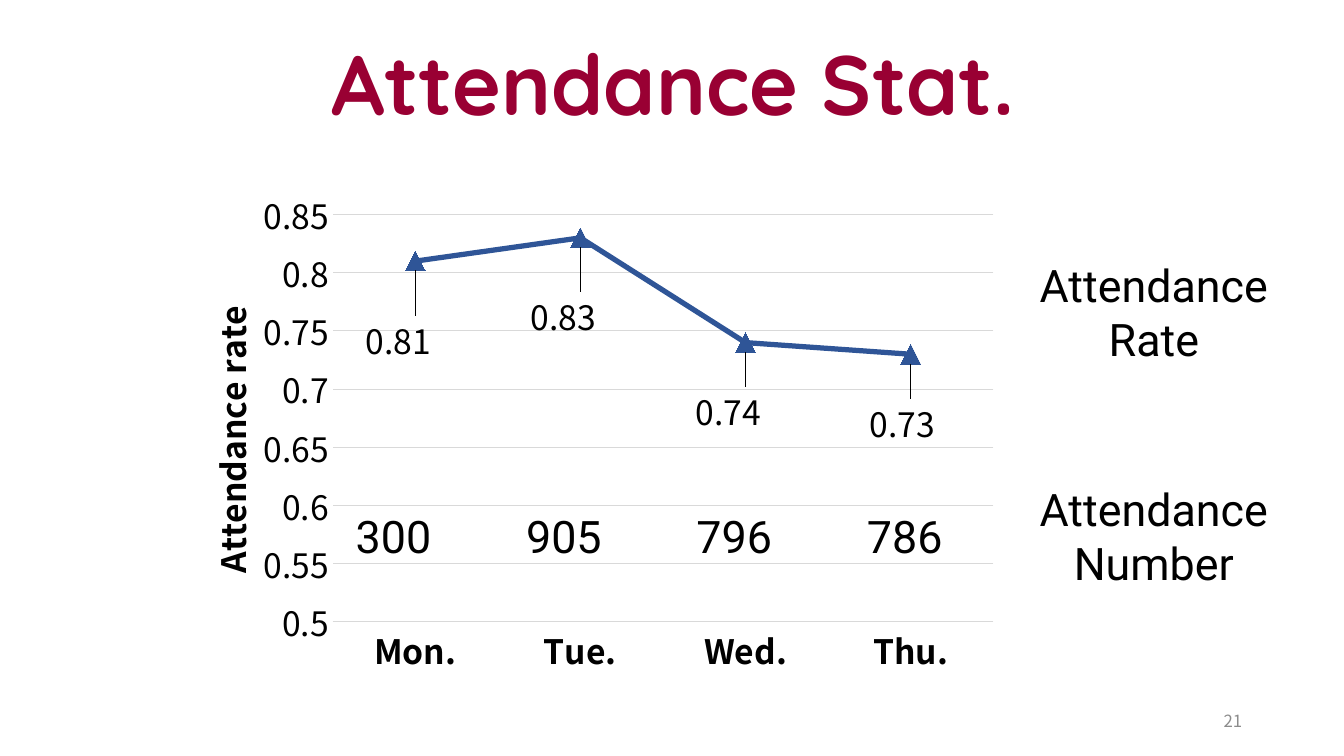
from pptx import Presentation
from pptx.chart.data import CategoryChartData
from pptx.dml.color import RGBColor
from pptx.enum.chart import XL_CHART_TYPE, XL_LABEL_POSITION, XL_MARKER_STYLE, XL_TICK_MARK
from pptx.enum.text import MSO_ANCHOR, PP_ALIGN
from pptx.oxml import parse_xml
from pptx.oxml.ns import nsdecls, qn
from pptx.util import Inches, Pt

RED = RGBColor(0x99, 0x00, 0x33)
BLUE = RGBColor(0x2F, 0x55, 0x97)
BLACK = RGBColor(0, 0, 0)
GRAY = RGBColor(0x8C, 0x8C, 0x8C)
PALE = RGBColor(0xD9, 0xD9, 0xD9)
SANS = "Noto Sans CJK SC"


def style(font, size, color=BLACK, name=SANS, bold=False):
    font.size = Pt(size)
    font.name = name
    font.bold = bold
    font.color.rgb = color


def add_text(text, left, top, width, height, align, size=32, color=BLACK, name="Roboto"):
    box = slide.shapes.add_textbox(Inches(left), Inches(top), Inches(width), Inches(height))
    frame = box.text_frame
    frame.word_wrap = True
    frame.text = text
    para = frame.paragraphs[0]
    para.alignment = align
    style(para.runs[0].font, size, color, name)
    return frame


def add_layout(parent, spot, x, y, extra=""):
    parent.insert(spot, parse_xml(
        f'<c:layout {nsdecls("c")}><c:manualLayout>{extra}'
        f'<c:x val="{x}"/><c:y val="{y}"/></c:manualLayout></c:layout>'))


deck = Presentation()
deck.slide_width = Inches(13.33)
deck.slide_height = Inches(7.5)
slide = deck.slides.add_slide(deck.slide_layouts[5])

title = slide.shapes.title
title.left, title.top = Inches(0.92), Inches(0.15)
title.width, title.height = Inches(11.5), Inches(1.45)
title.text_frame.text = "Attendance Stat."
title.text_frame.vertical_anchor = MSO_ANCHOR.MIDDLE
head = title.text_frame.paragraphs[0]
head.alignment = PP_ALIGN.CENTER
head.line_spacing = 0.9
style(head.runs[0].font, 60, RED, "Quicksand", True)

page = add_text("21", 9.42, 6.95, 3, 0.4, PP_ALIGN.RIGHT, 12, GRAY, SANS)
page.vertical_anchor = MSO_ANCHOR.MIDDLE

data = CategoryChartData()
data.categories = ["Mon.", "Tue.", "Wed.", "Thu."]
data.add_series("Series 1", [0.81, 0.83, 0.74, 0.73])
chart = slide.shapes.add_chart(
    XL_CHART_TYPE.LINE_MARKERS, Inches(1.62), Inches(1.78), Inches(8.4), Inches(4.99), data).chart
chart.has_legend = False
chart.has_title = False
style(chart.font, 24)

days = chart.category_axis
days.major_tick_mark = XL_TICK_MARK.NONE
days.format.line.color.rgb = PALE
days.format.line.width = Pt(0.75)
style(days.tick_labels.font, 24, bold=True)

rates = chart.value_axis
rates.minimum_scale = 0.5
rates.maximum_scale = 0.85
rates.major_unit = 0.05
rates.major_tick_mark = XL_TICK_MARK.NONE
rates.format.line.fill.background()
rates.major_gridlines.format.line.color.rgb = PALE
rates.major_gridlines.format.line.width = Pt(0.75)
style(rates.tick_labels.font, 24)
name = rates.axis_title.text_frame
name.text = "Attendance rate"
style(name.paragraphs[0].runs[0].font, 24, bold=True)

line = chart.plots[0].series[0]
line.smooth = False
line.format.line.color.rgb = BLUE
line.format.line.width = Pt(3.75)
line.marker.style = XL_MARKER_STYLE.TRIANGLE
line.marker.size = 14
line.marker.format.fill.solid()
line.marker.format.fill.fore_color.rgb = BLUE
line.marker.format.line.color.rgb = BLUE
for i in range(4):
    label = line.points[i].data_label
    style(label.font, 24)
    label.position = XL_LABEL_POSITION.BELOW

root = chart.element if hasattr(chart, "element") else chart._chartSpace
shifts = [(-0.02, 0.08), (-0.02, 0.08), (-0.02, 0.06), (-0.01, 0.06)]
for label, (x, y) in zip(root.iter(qn("c:dLbl")), shifts):
    add_layout(label, 1, x, y)

plot = root.find(".//" + qn("c:plotArea"))
for old in plot.findall(qn("c:layout")):
    plot.remove(old)
add_layout(plot, 0, 0.2, 0.07, '<c:layoutTarget val="inner"/><c:xMode val="edge"/><c:yMode val="edge"/>')
frame = plot.find(".//" + qn("c:manualLayout"))
for tag, size in (("w", 0.78), ("h", 0.81)):
    frame.append(parse_xml(f'<c:{tag} {nsdecls("c")} val="{size}"/>'))

side = root.find(".//" + qn("c:valAx")).find(qn("c:title"))
for old in side.findall(qn("c:layout")):
    side.remove(old)
add_layout(side, 1, 0.04, 0.24, '<c:xMode val="edge"/><c:yMode val="edge"/>')
body = side.find(".//" + qn("a:bodyPr"))
body.set("rot", "-5400000")
body.set("vert", "horz")

for i, count in enumerate(["300", "905", "796", "786"]):
    add_text(count, 3.43 + 1.69 * i, 5, 1.07, 0.64, PP_ALIGN.LEFT)

for text, top in (("Attendance Rate", 2.51), ("Attendance Number", 4.73)):
    add_text(text, 10.03, top, 2.83, 1.18, PP_ALIGN.CENTER)

deck.save("out.pptx")
